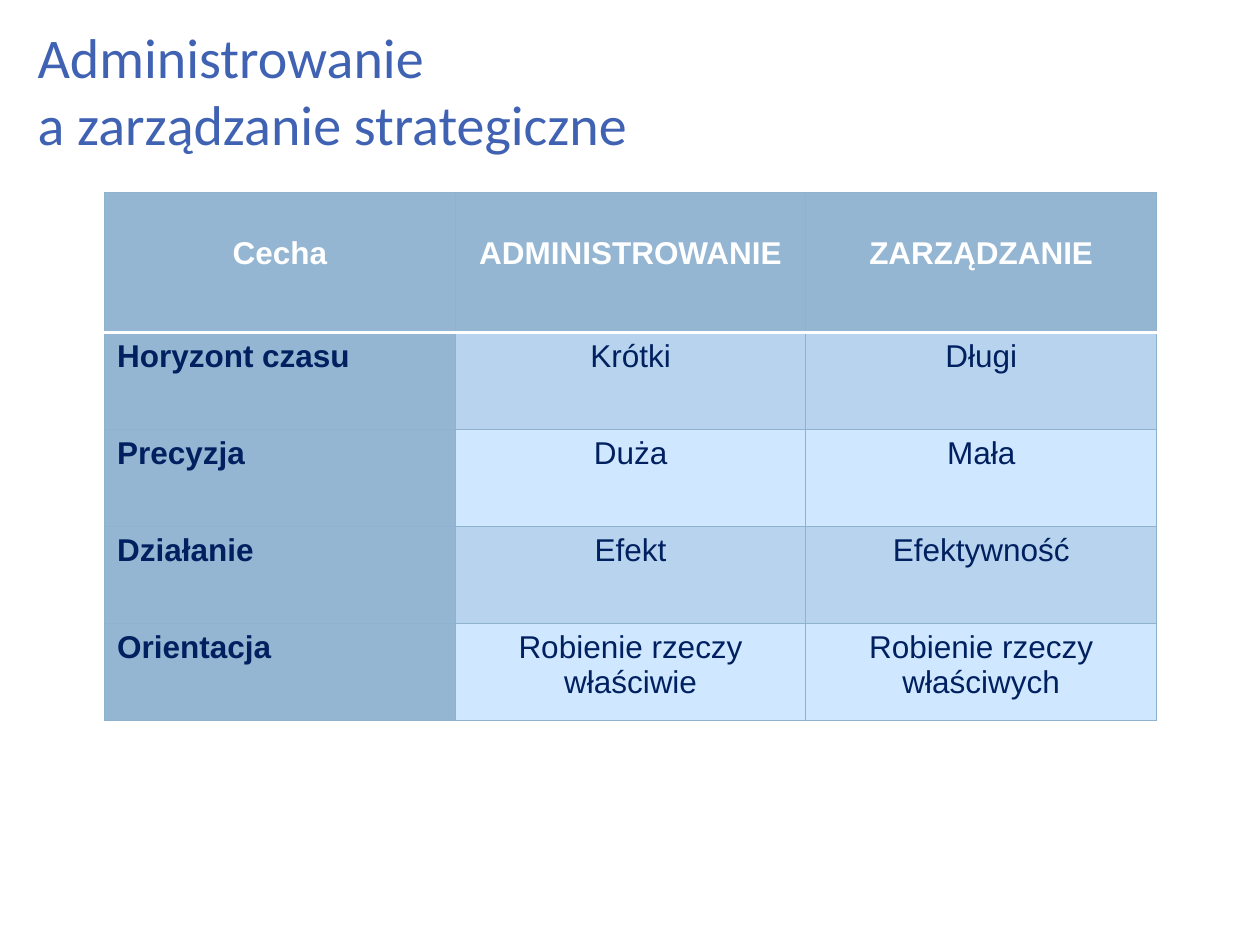
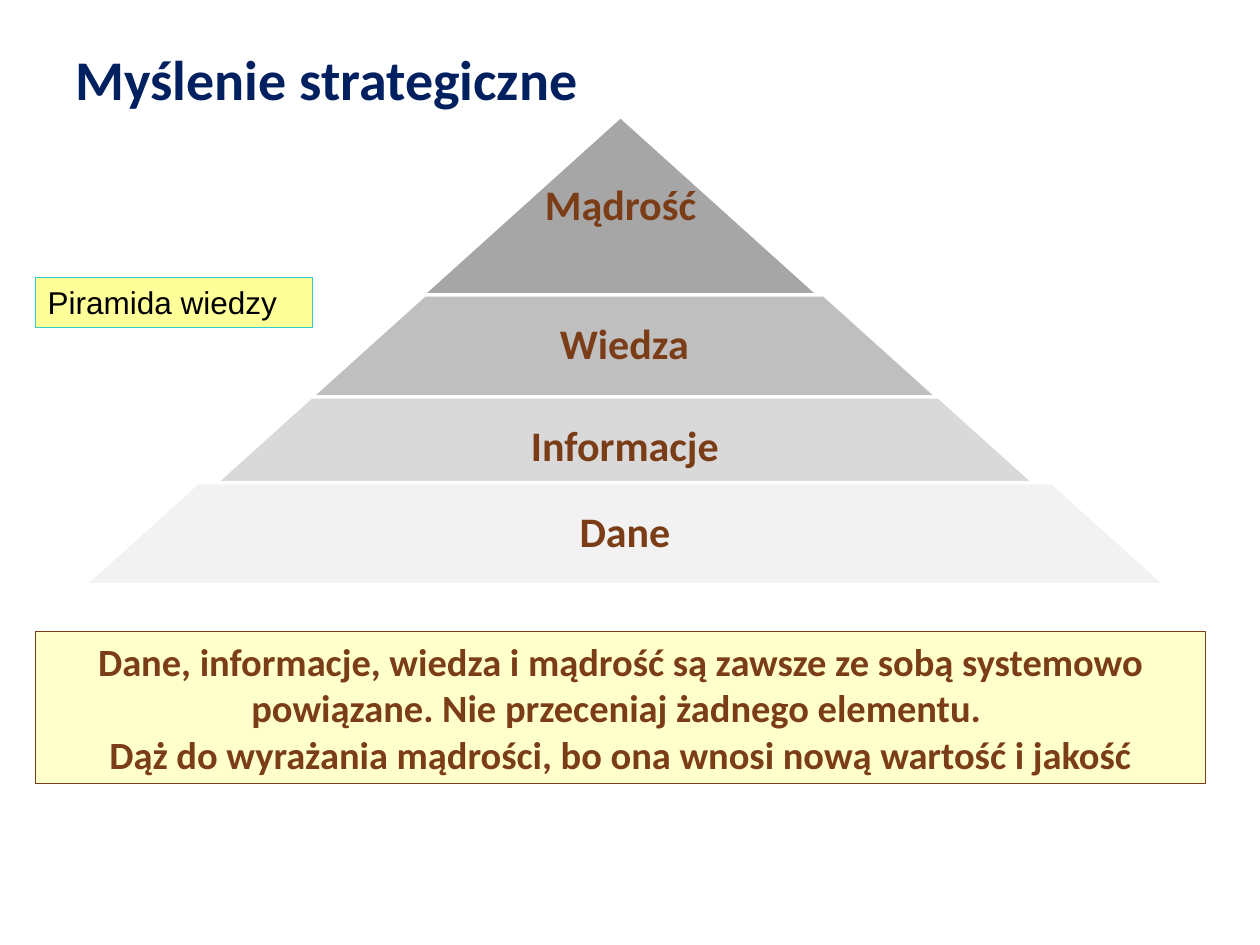
from dataclasses import dataclass
from typing import Any

import pptx
import pptx.dml.color
import pptx.enum.shapes
import pptx.enum.text
import pptx.oxml
import pptx.oxml.ns
import pptx.util

Inches = pptx.util.Inches
Pt = pptx.util.Pt
RGBColor = pptx.dml.color.RGBColor
Align = pptx.enum.text.PP_ALIGN
Anchor = pptx.enum.text.MSO_ANCHOR
Shape = pptx.enum.shapes.MSO_SHAPE

WHITE = RGBColor(0xFF, 0xFF, 0xFF)
BLACK = RGBColor(0, 0, 0)
NAVY = RGBColor(0x00, 0x20, 0x60)
TITLE_BLUE = RGBColor(0x40, 0x62, 0xB3)
BROWN = RGBColor(0x7B, 0x3D, 0x17)
TURQUOISE = RGBColor(0x33, 0xCC, 0xCC)
YELLOW = RGBColor(0xFF, 0xFF, 0x99)
CREAM = RGBColor(0xFF, 0xFF, 0xCC)
HEADER_BLUE = RGBColor(0x94, 0xB6, 0xD2)
GRID_BLUE = RGBColor(0x8F, 0xB2, 0xCF)
BAND_DARK = RGBColor(0xB7, 0xD3, 0xED)
BAND_LIGHT = RGBColor(0xCF, 0xE7, 0xFF)


@dataclass(frozen=True)
class Box:
    left: float
    top: float
    width: float
    height: float

    def lengths(self) -> list[int]:
        return [Inches(v) for v in (self.left, self.top, self.width, self.height)]


@dataclass(frozen=True)
class TextStyle:
    font: str
    size: int
    color: RGBColor
    bold: bool = False
    align: Any = Align.LEFT
    line_spacing: float | None = None


@dataclass(frozen=True)
class Level:
    label: str
    box: Box
    fill: RGBColor
    label_share: float = 0.65


COMPARISON = [
    ["Cecha", "ADMINISTROWANIE", "ZARZĄDZANIE"],
    ["Horyzont czasu", "Krótki", "Długi"],
    ["Precyzja", "Duża", "Mała"],
    ["Działanie", "Efekt", "Efektywność"],
    ["Orientacja", "Robienie rzeczy właściwie", "Robienie rzeczy właściwych"],
]
HEADER_HEIGHT, ROW_HEIGHT = 1.11, 0.77

LEVELS = [
    Level("Mądrość", Box(3.34, 0.93, 3.17, 1.42), RGBColor(0xA6, 0xA6, 0xA6), 1),
    Level("Wiedza", Box(2.47, 2.34, 4.97, 0.81), RGBColor(0xBF, 0xBF, 0xBF)),
    Level("Informacje", Box(1.57, 3.15, 6.78, 0.81), RGBColor(0xD9, 0xD9, 0xD9)),
    Level("Dane", Box(0.67, 3.83, 8.58, 0.81), RGBColor(0xF2, 0xF2, 0xF2)),
]
PYRAMID_SLOPE = 1.11
LEVEL_STYLE = TextStyle("Calibri", 24, BROWN, True, Align.CENTER, 0.9)


def write(frame: Any, text: str, style: TextStyle) -> None:
    frame.text = text
    frame.word_wrap = True
    for paragraph in frame.paragraphs:
        paragraph.alignment = style.align
        paragraph.line_spacing = style.line_spacing
        for run in paragraph.runs:
            run.font.name = style.font
            run.font.size = Pt(style.size)
            run.font.bold = style.bold
            run.font.color.rgb = style.color


def add_text(slide: Any, box: Box, text: str, style: TextStyle) -> Any:
    frame = slide.shapes.add_textbox(*box.lengths()).text_frame
    write(frame, text, style)
    return frame


def add_title(slide: Any, box: Box, text: str, color: RGBColor, bold: bool = False) -> None:
    add_text(slide, box, text, TextStyle("Calibri", 32, color, bold))


def add_filled(slide: Any, kind: Any, box: Box, fill: RGBColor,
               outline: RGBColor, outline_width: float) -> Any:
    shape = slide.shapes.add_shape(kind, *box.lengths())
    shape.shadow.inherit = False
    shape.fill.solid()
    shape.fill.fore_color.rgb = fill
    shape.line.color.rgb = outline
    shape.line.width = Pt(outline_width)
    return shape


def add_border(cell: Any, side: str, color: RGBColor, width: float) -> None:
    namespace = pptx.oxml.ns.nsdecls("a")
    cell._tc.get_or_add_tcPr().append(pptx.oxml.parse_xml(
        f'<a:ln{side} {namespace} w="{Pt(width)}"><a:solidFill>'
        f'<a:srgbClr val="{color}"/></a:solidFill></a:ln{side}>'))


def format_cell(cell: Any, text: str, row: int, column: int) -> None:
    header, feature = row == 0, column == 0
    for side in "LRTB":
        under_header = (row, side) in ((0, "B"), (1, "T"))
        add_border(cell, side, *((WHITE, 2) if under_header else (GRID_BLUE, 0.75)))
    cell.fill.solid()
    if header or feature:
        cell.fill.fore_color.rgb = HEADER_BLUE
    else:
        cell.fill.fore_color.rgb = BAND_DARK if row % 2 else BAND_LIGHT
    cell.margin_top = Inches(0.34 if header else 0.05)
    align = Align.LEFT if feature and not header else Align.CENTER
    write(cell.text_frame, text, TextStyle(
        "Arial", 18, WHITE if header else NAVY, header or feature, align))


def build_comparison(slide: Any) -> None:
    add_title(slide, Box(0.2, 0.13, 7.48, 0.87),
              "Administrowanie\va zarządzanie strategiczne", TITLE_BLUE)
    box = Box(0.83, 1.53, 8.35, HEADER_HEIGHT + 4 * ROW_HEIGHT)
    table = slide.shapes.add_table(
        len(COMPARISON), len(COMPARISON[0]), *box.lengths()).table
    table.horz_banding = False
    for row, texts in enumerate(COMPARISON):
        table.rows[row].height = Inches(ROW_HEIGHT if row else HEADER_HEIGHT)
        for column, text in enumerate(texts):
            format_cell(table.cell(row, column), text, row, column)


def add_level(slide: Any, level: Level) -> None:
    box = level.box
    trapezoid = add_filled(slide, Shape.TRAPEZOID, box, level.fill, WHITE, 2)
    trapezoid.adjustments[0] = PYRAMID_SLOPE
    label_width = box.width * level.label_share
    label_left = box.left + (box.width - label_width) / 2
    frame = add_text(slide, Box(label_left, box.top, label_width, box.height),
                     level.label, LEVEL_STYLE)
    frame.vertical_anchor = Anchor.MIDDLE
    frame.margin_left = frame.margin_right = Inches(0.03)
    frame.margin_top = frame.margin_bottom = Inches(0.03)


def build_pyramid(slide: Any) -> None:
    add_title(slide, Box(0.5, 0.3, 9, 0.85), "Myślenie strategiczne", NAVY, True)
    for level in LEVELS:
        add_level(slide, level)
    caption = add_filled(slide, Shape.RECTANGLE, Box(0.28, 2.2, 2.2, 0.4),
                         YELLOW, TURQUOISE, 0.75)
    write(caption.text_frame, "Piramida wiedzy", TextStyle("Arial", 18, BLACK))
    conclusion = add_filled(slide, Shape.RECTANGLE, Box(0.28, 5.01, 9.29, 1.21),
                            CREAM, BROWN, 0.75)
    write(conclusion.text_frame,
          "Dane, informacje, wiedza i mądrość są zawsze ze sobą systemowo "
          "powiązane. Nie przeceniaj żadnego elementu. \n"
          "Dąż do wyrażania mądrości, bo ona wnosi nową wartość i jakość",
          TextStyle("Calibri", 22, BROWN, True, Align.CENTER))


def main() -> None:
    presentation = pptx.Presentation()
    presentation.slide_width = Inches(10)
    presentation.slide_height = Inches(7.5)
    for build in (build_comparison, build_pyramid):
        build(presentation.slides.add_slide(presentation.slide_layouts[6]))
    presentation.save("out.pptx")


if __name__ == "__main__":
    main()
